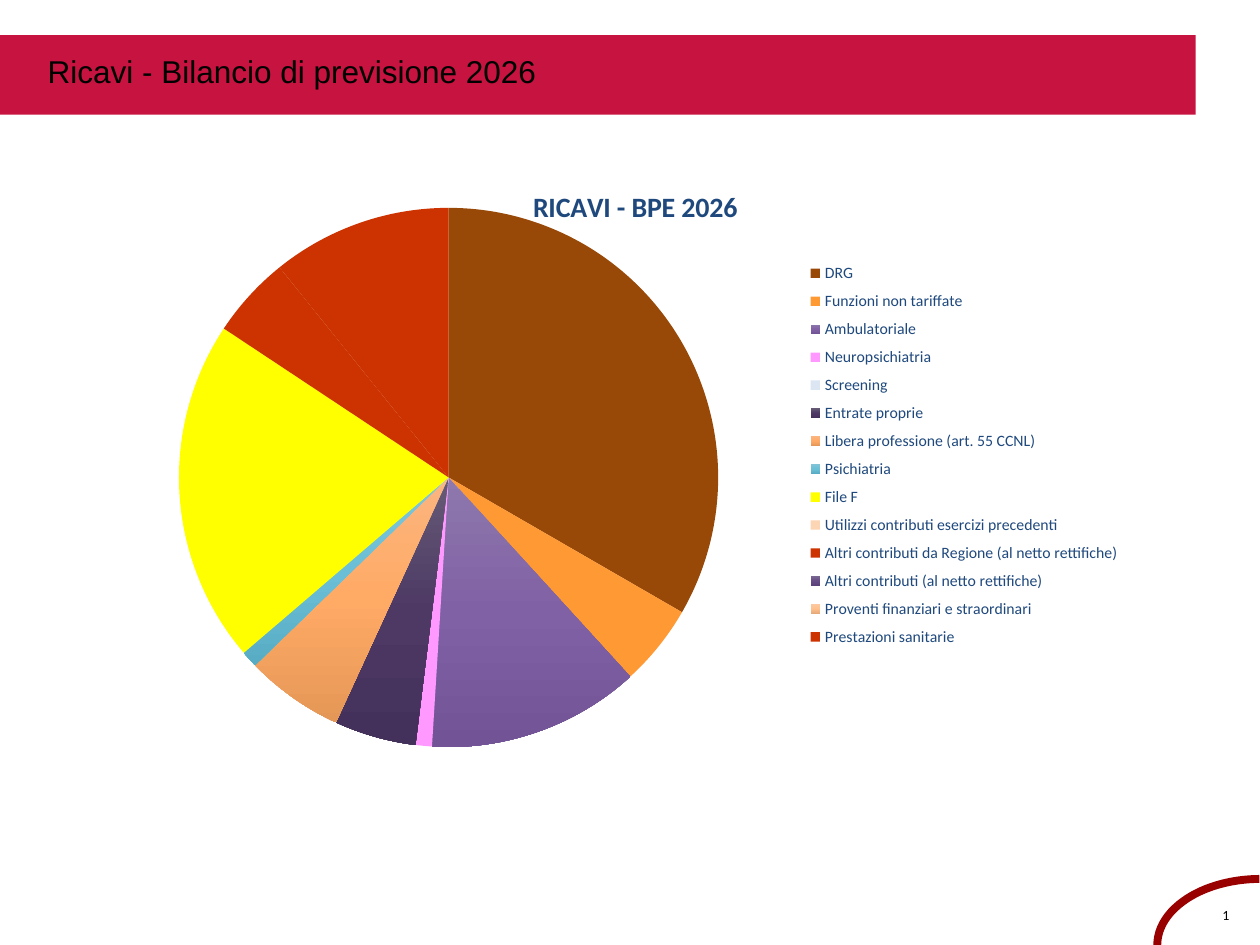
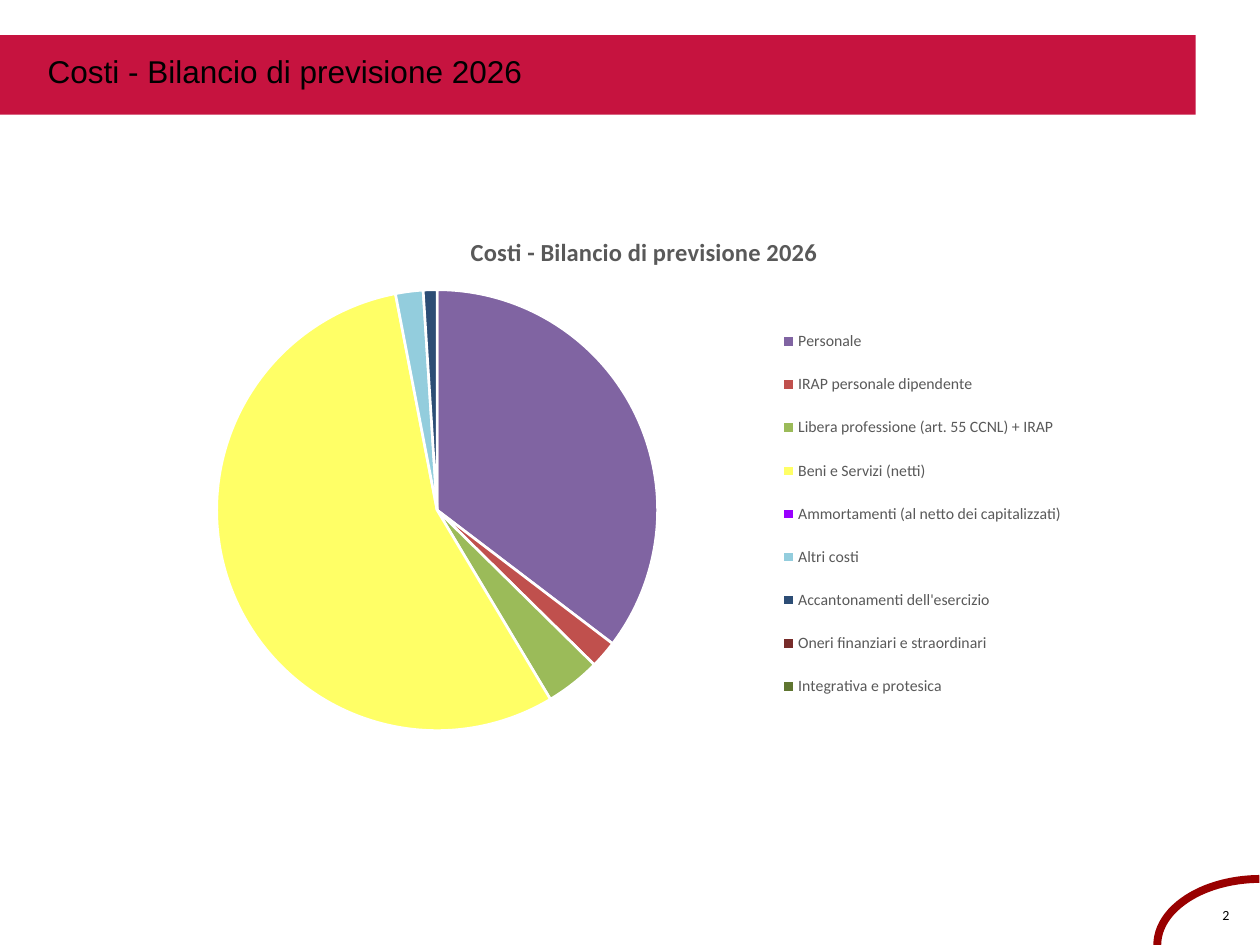
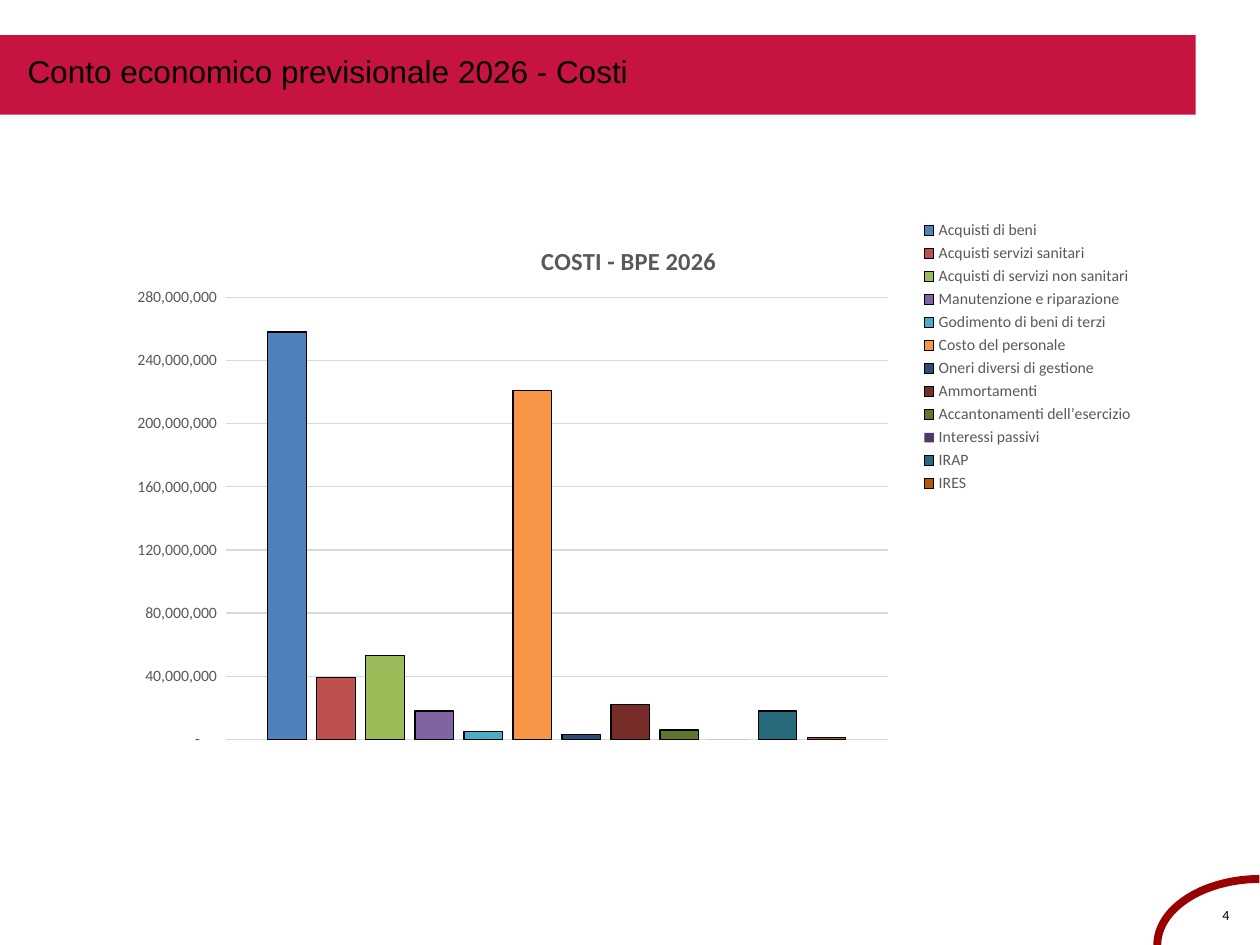
from copy import deepcopy
from dataclasses import dataclass

from lxml.etree import SubElement
from pptx import Presentation
from pptx.chart.chart import Chart
from pptx.chart.data import CategoryChartData
from pptx.dml.color import RGBColor
from pptx.enum.chart import XL_CHART_TYPE, XL_LEGEND_POSITION, XL_TICK_MARK
from pptx.enum.shapes import MSO_SHAPE
from pptx.enum.text import MSO_AUTO_SIZE, PP_ALIGN
from pptx.oxml.ns import qn
from pptx.slide import Slide
from pptx.util import Emu, Pt

PX = 9144
COLORS = {
    "black": "000000", "white": "FFFFFF", "band": "C6133F", "arc": "990000",
    "navy": "1F497D", "gray": "595959", "grid": "D9D9D9",
    "brown": "984807", "amber": "FF9933", "pink": "FF99FF", "ice": "DCE6F2",
    "yellow": "FFFF00", "peach": "FCD5B5", "brick": "CC3300",
    "violet": "8064A2", "red": "C0504D", "green": "9BBB59", "lemon": "FFFF66",
    "purple": "9900FF", "sky": "93CDDD", "deep_blue": "2C4D75",
    "maroon": "772C2A", "olive": "5F7530", "blue": "4F81BD", "aqua": "4BACC6",
    "orange": "F79646", "plum": "4D3B62", "teal": "276A7C", "rust": "B65708",
}
GRADIENTS = {
    "lilac_fade": ("8E78AC", "8061A5", "715396"),
    "plum_fade": ("665B76", "4D3964", "44315B"),
    "apricot_fade": ("FBB57F", "FFAA65", "E59757"),
    "aqua_fade": ("81C4D7", "6ABFD6", "58ADC4"),
    "mauve_fade": ("796792", "664C86", "5A4179"),
    "sand_fade": ("FCC89F", "FFC08B", "E5AA79"),
}


@dataclass(frozen=True)
class Box:
    """A rectangle in px; zero width means only its corner matters."""
    left: int
    top: int
    width: int = 0
    height: int = 0

    def emu(self) -> tuple:
        """Return the rectangle in EMU."""
        return tuple(Emu(n * PX) for n in (self.left, self.top, self.width, self.height))


@dataclass(frozen=True)
class Entry:
    """One legend entry with its amount and colour."""
    label: str
    amount: int
    color: str
    outlined: bool = True


@dataclass(frozen=True)
class BudgetChart:
    """A budget chart with the places of its parts."""
    title: str
    title_size: int
    text_color: str
    frame: Box
    title_at: Box
    plot_at: Box
    legend_at: Box
    entries: tuple[Entry, ...]
    slice_border: str = ""
    columns: bool = False


@dataclass(frozen=True)
class Page:
    """One slide: heading, number and chart."""
    heading: str
    heading_box: Box
    number: str
    chart: BudgetChart


PAGES = (
    Page("Ricavi - Bilancio di previsione 2026", Box(28, 36, 622, 71), "1", BudgetChart(
        "RICAVI - BPE 2026", 16, "navy",
        Box(89, 124, 821, 503), Box(419, 145), Box(113, 165, 486, 428), Box(639, 202, 252, 319),
        (
            Entry("DRG", 34, "brown"),
            Entry("Funzioni non tariffate", 5, "amber"),
            Entry("Ambulatoriale", 13, "lilac_fade"),
            Entry("Neuropsichiatria", 1, "pink"),
            Entry("Screening", 0, "ice"),
            Entry("Entrate proprie", 5, "plum_fade"),
            Entry("Libera professione (art. 55 CCNL)", 6, "apricot_fade"),
            Entry("Psichiatria", 1, "aqua_fade"),
            Entry("File F", 21, "yellow"),
            Entry("Utilizzi contributi esercizi precedenti", 0, "peach"),
            Entry("Altri contributi da Regione (al netto rettifiche)", 5, "brick"),
            Entry("Altri contributi (al netto rettifiche)", 0, "mauve_fade"),
            Entry("Proventi finanziari e straordinari", 0, "sand_fade"),
            Entry("Prestazioni sanitarie", 11, "brick"),
        ))),
    Page("Costi - Bilancio di previsione 2026", Box(28, 36, 622, 71), "2", BudgetChart(
        "Costi - Bilancio di previsione 2026", 14, "gray",
        Box(106, 162, 803, 472), Box(370, 183), Box(124, 230, 446, 350), Box(619, 244, 226, 328),
        (
            Entry("Personale", 35, "violet"),
            Entry("IRAP personale dipendente", 2, "red"),
            Entry("Libera professione (art. 55 CCNL) + IRAP", 4, "green"),
            Entry("Beni e Servizi (netti)", 55, "lemon"),
            Entry("Ammortamenti (al netto dei capitalizzati)", 0, "purple"),
            Entry("Altri costi", 2, "sky"),
            Entry("Accantonamenti dell'esercizio", 1, "deep_blue"),
            Entry("Oneri finanziari e straordinari", 0, "maroon"),
            Entry("Integrativa e protesica", 0, "olive"),
        ), slice_border="white")),
    Page("Conto economico previsionale 2026 - Costi", Box(12, 36, 638, 71), "4", BudgetChart(
        "COSTI - BPE 2026", 14, "gray",
        Box(91, 170, 811, 433), Box(426, 190), Box(179, 236, 526, 351), Box(730, 172, 171, 223),
        (
            Entry("Acquisti di beni", 258_000_000, "blue"),
            Entry("Acquisti servizi sanitari", 39_000_000, "red"),
            Entry("Acquisti di servizi non sanitari", 53_000_000, "green"),
            Entry("Manutenzione e riparazione", 18_000_000, "violet"),
            Entry("Godimento di beni di terzi", 5_000_000, "aqua"),
            Entry("Costo del personale", 221_000_000, "orange"),
            Entry("Oneri diversi di gestione", 3_000_000, "deep_blue"),
            Entry("Ammortamenti", 22_000_000, "maroon"),
            Entry("Accantonamenti dell’esercizio", 6_000_000, "olive"),
            Entry("Interessi passivi", 0, "plum", outlined=False),
            Entry("IRAP", 18_000_000, "teal"),
            Entry("IRES", 1_000_000, "rust"),
        ), columns=True)),
)


def rgb(name: str) -> RGBColor:
    """Look up a named colour."""
    return RGBColor.from_string(COLORS[name])


def style_font(font, size: int, color: str, family: str = "Calibri", bold: bool = False) -> None:
    """Set size, colour, family and weight of a font."""
    font.size, font.name, font.bold = Pt(size), family, bold
    font.color.rgb = rgb(color)


def style_line(line, color: str, width: float) -> None:
    """Give a line a colour and width, or hide it when no colour is named."""
    if color:
        line.color.rgb = rgb(color)
        line.width = Pt(width)
    else:
        line.fill.background()


def add_text(slide: Slide, text: str, box: Box, size: int, family: str):
    """Add a one-line text box and return it."""
    label = slide.shapes.add_textbox(*box.emu())
    label.text_frame.word_wrap = True
    run = label.text_frame.paragraphs[0].add_run()
    run.text = text
    style_font(run.font, size, "black", family)
    return label


def add_page_furniture(slide: Slide, page: Page) -> None:
    """Draw the corner arc, page number, band and heading."""
    corner = slide.shapes.add_shape(MSO_SHAPE.ARC, *Box(948, 668, 105, 164).emu())
    corner.shadow.inherit = False
    corner.rotation = 270
    corner.adjustments[0], corner.adjustments[1] = 162, 215.34
    corner.fill.background()
    style_line(corner.line, "arc", 4.5)

    number = add_text(slide, page.number, Box(957, 718, 32, 16), 8, "Calibri").text_frame
    number.margin_left = number.margin_right = number.margin_bottom = 0
    number.margin_top = Emu(3 * PX)
    number.paragraphs[0].alignment = PP_ALIGN.CENTER
    number.paragraphs[0].line_spacing = 0.93

    band = slide.shapes.add_shape(MSO_SHAPE.RECTANGLE, *Box(0, 28, 949, 63).emu())
    band.shadow.inherit = False
    band.fill.solid()
    band.fill.fore_color.rgb = rgb("band")
    style_line(band.line, "", 0)

    heading = add_text(slide, page.heading, page.heading_box, 18, "Arial")
    heading.text_frame.auto_size = MSO_AUTO_SIZE.SHAPE_TO_FIT_TEXT


def place(part, at: Box, frame: Box, inner: bool = False) -> None:
    """Fix a chart part at a place measured on the slide."""
    for automatic in part.findall(qn("c:layout")):
        part.remove(automatic)
    overlay = part.find(qn("c:overlay"))
    layout = part.makeelement(qn("c:layout"))
    part.insert(0 if overlay is None else part.index(overlay), layout)
    manual = SubElement(layout, qn("c:manualLayout"))
    settings = {"layoutTarget": "inner"} if inner else {}
    settings |= {"xMode": "edge", "yMode": "edge"}
    settings["x"] = (at.left - frame.left) / frame.width
    settings["y"] = (at.top - frame.top) / frame.height
    if at.width:
        settings["w"] = at.width / frame.width
        settings["h"] = at.height / frame.height
    for tag, setting in settings.items():
        SubElement(manual, qn(f"c:{tag}")).set("val", str(setting))


def paint(part_format, color: str) -> None:
    """Fill a slice or column with a plain colour or a downward fade."""
    fill = part_format.fill
    if color in COLORS:
        fill.solid()
        fill.fore_color.rgb = rgb(color)
        return
    fill.gradient()
    fill.gradient_angle = 270
    stop_list = part_format._element.find(".//" + qn("a:gsLst"))
    stop_list.insert(1, deepcopy(stop_list[0]))
    for stop, position, shade in zip(fill.gradient_stops, (0, 0.5, 1), GRADIENTS[color]):
        stop.position = position
        stop.color.rgb = RGBColor.from_string(shade)


def style_slices(chart: Chart, budget: BudgetChart) -> None:
    """Colour every slice of a pie."""
    pie = chart.plots[0]
    pie.vary_by_categories = True
    for index, entry in enumerate(budget.entries):
        piece = pie.series[0].points[index].format
        paint(piece, entry.color)
        style_line(piece.line, budget.slice_border, 1.5)


def style_columns(chart: Chart, budget: BudgetChart) -> None:
    """Colour the columns and set up the axes."""
    plot = chart.plots[0]
    plot.vary_by_categories = False
    plot.gap_width, plot.overlap = 219, -27
    for series, entry in zip(plot.series, budget.entries):
        series.invert_if_negative = False
        paint(series.format, entry.color)
        style_line(series.format.line, "black" if entry.outlined else "", 0.75)
    chart.category_axis.visible = False
    euros = chart.value_axis
    euros.minimum_scale, euros.maximum_scale, euros.major_unit = 0, 280_000_000, 40_000_000
    euros.major_tick_mark = euros.minor_tick_mark = XL_TICK_MARK.NONE
    style_line(euros.format.line, "", 0)
    style_line(euros.major_gridlines.format.line, "grid", 0.75)
    euros.tick_labels.number_format = '_ * #,##0_ ;_ * \\-#,##0_ ;_ * "-"??_ ;_ '
    euros.tick_labels.number_format_is_linked = False
    style_font(euros.tick_labels.font, 9, budget.text_color)


def add_budget_chart(slide: Slide, budget: BudgetChart) -> None:
    """Add a pie or column chart with its title and legend."""
    figures = CategoryChartData()
    if budget.columns:
        kind, corner = XL_CHART_TYPE.COLUMN_CLUSTERED, XL_LEGEND_POSITION.CORNER
        figures.categories = ["1"]
        for entry in budget.entries:
            figures.add_series(entry.label, [entry.amount])
    else:
        kind, corner = XL_CHART_TYPE.PIE, XL_LEGEND_POSITION.RIGHT
        figures.categories = [entry.label for entry in budget.entries]
        figures.add_series("Series 1", [entry.amount for entry in budget.entries])
    chart = slide.shapes.add_chart(kind, *budget.frame.emu(), figures).chart
    style_font(chart.font, 10, "black")
    (style_columns if budget.columns else style_slices)(chart, budget)

    chart.has_title = True
    caption = chart.chart_title.text_frame.paragraphs[0].add_run()
    caption.text = budget.title
    style_font(caption.font, budget.title_size, budget.text_color, bold=True)
    chart.has_legend = True
    chart.legend.position = corner
    chart.legend.include_in_layout = False
    style_font(chart.legend.font, 9, budget.text_color)

    place(chart.chart_title._element, budget.title_at, budget.frame)
    place(chart.legend._element, budget.legend_at, budget.frame)
    place(chart._chartSpace.chart.plotArea, budget.plot_at, budget.frame, inner=True)


def main() -> None:
    """Build the deck and save it."""
    deck = Presentation()
    deck.slide_width, deck.slide_height = Emu(1000 * PX), Emu(750 * PX)
    for page in PAGES:
        slide = deck.slides.add_slide(deck.slide_layouts[6])
        add_page_furniture(slide, page)
        add_budget_chart(slide, page.chart)
    deck.save("out.pptx")


if __name__ == "__main__":
    main()
